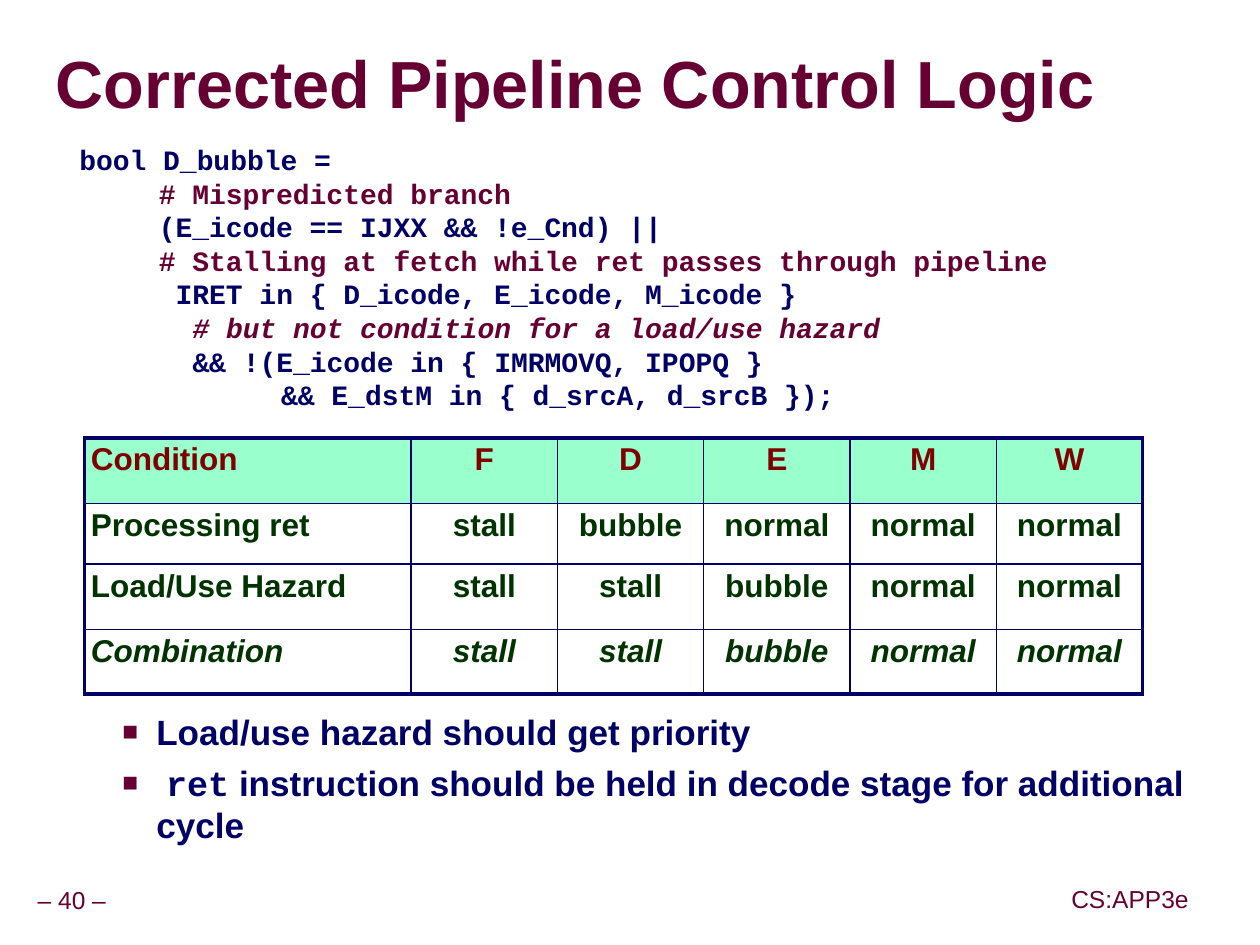
import dataclasses

import pptx
import pptx.dml.color
import pptx.enum.text
import pptx.oxml
import pptx.oxml.ns
import pptx.util
from pptx.util import Inches

ALIGN = pptx.enum.text.PP_ALIGN
ANCHOR = pptx.enum.text.MSO_ANCHOR


@dataclasses.dataclass(frozen=True)
class Theme:
    sans: str = "Arial"
    mono: str = "Courier New"
    maroon: str = "660033"
    navy: str = "000066"
    header_text: str = "800000"
    header_fill: str = "99FFCC"
    cell_text: str = "003300"
    shadow: str = "969696"
    title_size: int = 38
    bullet_size: int = 20
    table_size: int = 18
    code_size: int = 16
    footer_size: int = 14
    outer_line: float = 2.25
    inner_line: float = 1


THEME = Theme()
TAB = 0.63
CHARACTER = 0.8 / 6

CODE = [
    ("bool D_bubble =", 0, THEME.navy, False),
    ("# Mispredicted branch", TAB, THEME.maroon, False),
    ("(E_icode == IJXX && !e_Cnd) ||", TAB, THEME.navy, False),
    ("# Stalling at fetch while ret passes through pipeline", TAB, THEME.maroon, False),
    ("IRET in { D_icode, E_icode, M_icode }", TAB + CHARACTER, THEME.navy, False),
    ("# but not condition for a load/use hazard", TAB + 2 * CHARACTER, THEME.maroon, True),
    ("&& !(E_icode in { IMRMOVQ, IPOPQ }", TAB + 2 * CHARACTER, THEME.navy, False),
    ("&& E_dstM in { d_srcA, d_srcB });", 12 * CHARACTER, THEME.navy, False),
]
CONDITIONS = [
    ["Condition", "F", "D", "E", "M", "W"],
    ["Processing ret", "stall", "bubble", "normal", "normal", "normal"],
    ["Load/Use Hazard", "stall", "stall", "bubble", "normal", "normal"],
    ["Combination", "stall", "stall", "bubble", "normal", "normal"],
]
COLUMN_WIDTHS = [2.59] + [1.16] * 5
ROW_HEIGHTS = [0.52, 0.48, 0.52, 0.51]
BULLETS = [
    [("Load/use hazard should get priority", THEME.sans)],
    [
        (" ", THEME.sans),
        ("ret", THEME.mono),
        (" instruction should be held in decode stage for additional cycle", THEME.sans),
    ],
]


def style_font(font, name, size, color, bold=True, italic=False):
    font.name = name
    font.size = pptx.util.Pt(size)
    font.bold = bold
    font.italic = italic
    font.color.rgb = pptx.dml.color.RGBColor.from_string(color)


def parse_element(tag, attributes="", content=""):
    namespace = pptx.oxml.ns.nsdecls("a")
    return pptx.oxml.parse_xml(f"<a:{tag} {namespace} {attributes}>{content}</a:{tag}>")


def solid_fill(color):
    return f'<a:solidFill><a:srgbClr val="{color}"/></a:solidFill>'


def place(shape, left, top, width, height):
    shape.left, shape.top = Inches(left), Inches(top)
    shape.width, shape.height = Inches(width), Inches(height)


def set_margins(target, horizontal, vertical):
    target.margin_left = target.margin_right = Inches(horizontal)
    target.margin_top = target.margin_bottom = Inches(vertical)


def set_indent(paragraph, margin, first_line=0):
    properties = paragraph._p.get_or_add_pPr()
    properties.set("marL", str(Inches(margin)))
    properties.set("indent", str(Inches(first_line)))
    return properties


def add_text_box(slide, left, top, width, height, wrap):
    box = slide.shapes.add_textbox(Inches(left), Inches(top), Inches(width), Inches(height))
    frame = box.text_frame
    frame.word_wrap = wrap
    set_margins(frame, 0.05, 0.05)
    return frame


def set_title(slide, text):
    title = slide.shapes.title
    place(title, 0.44, 0.27, 9.52, 0.85)
    frame = title.text_frame
    frame.auto_size = pptx.enum.text.MSO_AUTO_SIZE.NONE
    frame.vertical_anchor = ANCHOR.MIDDLE
    set_margins(frame, 0, 0)
    paragraph = frame.paragraphs[0]
    paragraph.alignment = ALIGN.LEFT
    paragraph.line_spacing = 0.87
    run = paragraph.add_run()
    run.text = text
    style_font(run.font, THEME.sans, THEME.title_size, THEME.maroon)
    shadow = (
        '<a:outerShdw dist="53882" dir="2700000">'
        f'<a:srgbClr val="{THEME.shadow}"/></a:outerShdw>'
    )
    fill = run._r.get_or_add_rPr().find(pptx.oxml.ns.qn("a:solidFill"))
    fill.addnext(parse_element("effectLst", content=shadow))


def set_bullets(slide, items):
    body = slide.placeholders[1]
    place(body, 0.33, 5.58, 9.18, 1.62)
    frame = body.text_frame
    frame.auto_size = pptx.enum.text.MSO_AUTO_SIZE.NONE
    frame.vertical_anchor = ANCHOR.TOP
    set_margins(frame, 0.1, 0.05)
    for index, item in enumerate(items):
        paragraph = frame.add_paragraph() if index else frame.paragraphs[0]
        paragraph.level = 1
        paragraph.space_before = pptx.util.Pt(5)
        properties = set_indent(paragraph, 0.81, -0.27)
        color = f'<a:srgbClr val="{THEME.maroon}"/>'
        properties.append(parse_element("buClr", content=color))
        properties.append(parse_element("buSzPct", 'val="75000"'))
        properties.append(parse_element("buFont", f'typeface="{THEME.sans}"'))
        properties.append(parse_element("buChar", 'char="■"'))
        for text, font_name in item:
            run = paragraph.add_run()
            run.text = text
            style_font(run.font, font_name, THEME.bullet_size, THEME.navy)


def set_borders(cell, outer_sides):
    properties = cell._tc.get_or_add_tcPr()
    for side in ("L", "R", "T", "B"):
        points = THEME.outer_line if side in outer_sides else THEME.inner_line
        width = pptx.util.Pt(points)
        properties.append(parse_element(f"ln{side}", f'w="{width}"', solid_fill(THEME.navy)))


def add_condition_table(slide, rows):
    row_count, column_count = len(rows), len(rows[0])
    table = slide.shapes.add_table(
        row_count, column_count, Inches(0.67), Inches(3.47),
        Inches(sum(COLUMN_WIDTHS)), Inches(sum(ROW_HEIGHTS)),
    ).table
    table.first_row = table.horz_banding = False
    for column, width in zip(table.columns, COLUMN_WIDTHS):
        column.width = Inches(width)
    for row, height in zip(table.rows, ROW_HEIGHTS):
        row.height = Inches(height)
    for row_index, texts in enumerate(rows):
        is_header, is_last = row_index == 0, row_index == row_count - 1
        for column_index, text in enumerate(texts):
            cell = table.cell(row_index, column_index)
            set_margins(cell, 0.05, 0.05)
            edges = {"T": is_header, "B": is_last, "L": column_index == 0,
                     "R": column_index == column_count - 1}
            set_borders(cell, [side for side, outer in edges.items() if outer])
            if is_header:
                cell.fill.solid()
                cell.fill.fore_color.rgb = pptx.dml.color.RGBColor.from_string(THEME.header_fill)
            else:
                cell.fill.background()
            paragraph = cell.text_frame.paragraphs[0]
            paragraph.text = text
            paragraph.alignment = ALIGN.CENTER if column_index else ALIGN.LEFT
            paragraph.line_spacing = 0.95
            color = THEME.header_text if is_header else THEME.cell_text
            style_font(paragraph.font, THEME.sans, THEME.table_size, color, italic=is_last)


def add_code(slide, lines):
    frame = add_text_box(slide, 0.58, 1.08, 9.24, 2.51, wrap=True)
    for index, (text, margin, color, italic) in enumerate(lines):
        paragraph = frame.add_paragraph() if index else frame.paragraphs[0]
        paragraph.text = text
        set_indent(paragraph, margin)
        style_font(paragraph.font, THEME.mono, THEME.code_size, color, italic=italic)


def add_footer(slide, text, left, top, width, height):
    frame = add_text_box(slide, left, top, width, height, wrap=False)
    frame.vertical_anchor = ANCHOR.MIDDLE
    paragraph = frame.paragraphs[0]
    paragraph.text = text
    paragraph.alignment = ALIGN.CENTER
    paragraph.line_spacing = 0.9
    style_font(paragraph.font, THEME.sans, THEME.footer_size, THEME.maroon, bold=False)


def main():
    presentation = pptx.Presentation()
    presentation.slide_width, presentation.slide_height = Inches(9.99), Inches(7.49)
    slide = presentation.slides.add_slide(presentation.slide_layouts[1])
    add_footer(slide, "– 40 –", 0.24, 6.99, 0.66, 0.31)
    add_footer(slide, "CS:APP3e", 8.44, 6.98, 1.04, 0.32)
    set_title(slide, "Corrected Pipeline Control Logic")
    set_bullets(slide, BULLETS)
    add_condition_table(slide, CONDITIONS)
    add_code(slide, CODE)
    presentation.save("out.pptx")


if __name__ == "__main__":
    main()
